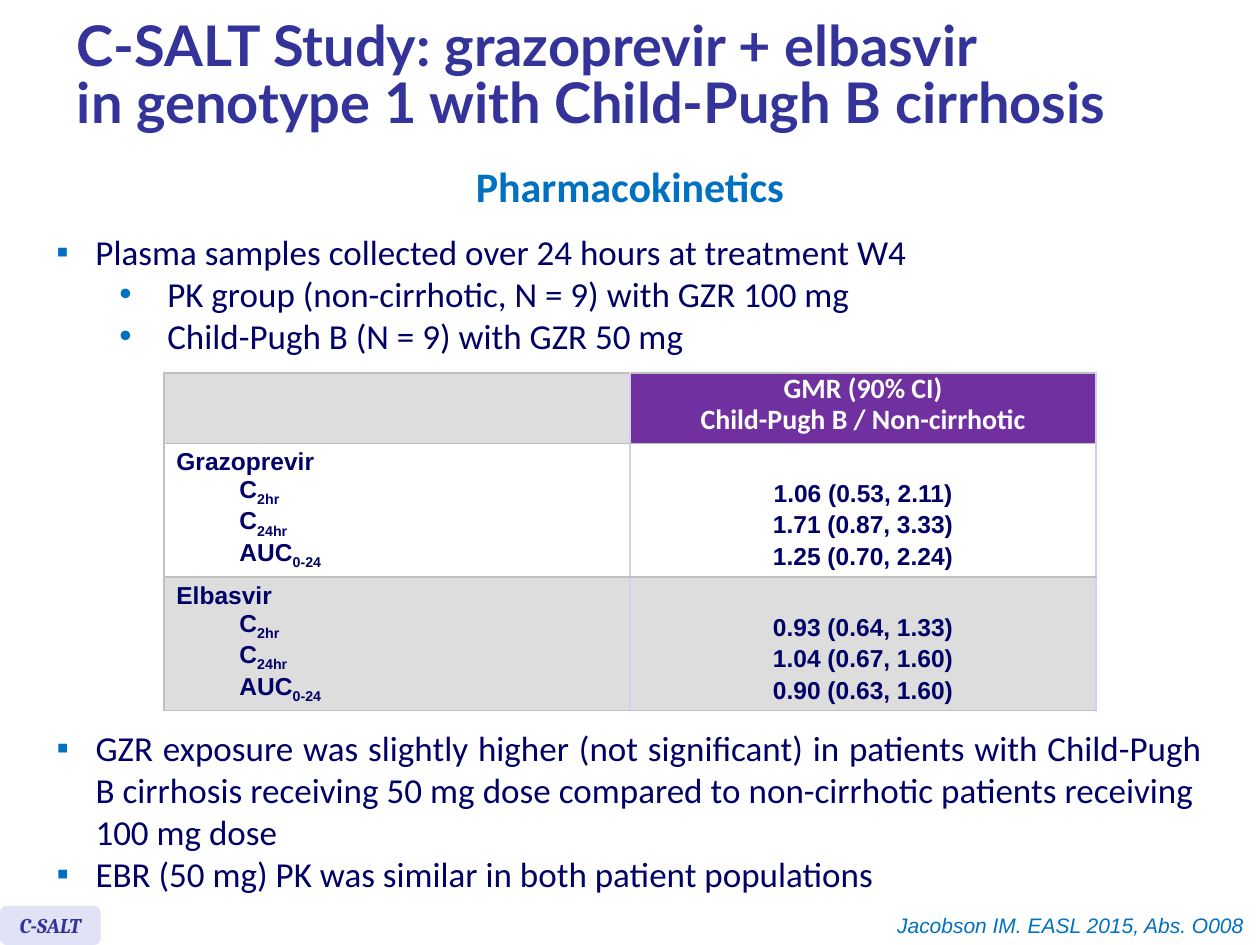
"""Build the C-SALT pharmacokinetics slide."""
from lxml.etree import SubElement as Sub
from pptx import Presentation
from pptx.dml.color import RGBColor as Rgb
from pptx.enum.shapes import MSO_SHAPE as Shape
from pptx.enum.text import MSO_ANCHOR as Anchor, PP_ALIGN as Align
from pptx.oxml.ns import qn
from pptx.util import Inches, Pt

HUE = dict(title="333399", text="000066", blue="0070C0", head="7030A0", white="FFFFFF",
           band="DDDDDD", tag="E2E2F6", edge="C0C0C0", pale="D0D0F0")
TITLE = "C-SALT Study: grazoprevir + elbasvir \vin genotype 1 with Child-Pugh B cirrhosis"
TOPIC = "Pharmacokinetics"
CITE = "Jacobson IM. EASL 2015, Abs. O008"
TAG = "C-SALT"
INTRO = [(0, "Plasma samples collected over 24 hours at treatment W4"),
         (1, "PK group (non-cirrhotic, N = 9) with GZR 100 mg"),
         (1, "Child-Pugh B (N = 9) with GZR 50 mg")]
NOTES = [(0, "GZR exposure was slightly higher (not significant) in patients with Child-Pugh B "
             "cirrhosis receiving 50 mg dose compared to non-cirrhotic patients receiving \v100 mg dose"),
         (0, "EBR (50 mg) PK was similar in both patient populations")]
LEVELS = [("▪", 0.31, -0.31), ("•", 0.88, -0.38)]
HEAD = ["GMR (90% CI)", "Child-Pugh B / Non-cirrhotic"]
TERMS = [("C", "2hr"), ("C", "24hr"), ("AUC", "0-24")]
DRUGS = [("Grazoprevir", ["1.06 (0.53, 2.11)", "1.71 (0.87, 3.33)", "1.25 (0.70, 2.24)"], "white"),
         ("Elbasvir", ["0.93 (0.64, 1.33)", "1.04 (0.67, 1.60)", "0.90 (0.63, 1.60)"], "band")]
ROWS = [0.56, 1.06, 1.06]


def style(para, face, size, hue, bold=False, slant=False):
    for run in para.runs:
        font = run.font
        font.name, font.size, font.bold, font.italic = face, Pt(size), bold, slant
        font.color.rgb = Rgb.from_string(HUE[hue])


def indent(para, left, first=0):
    props = para._p.get_or_add_pPr()
    props.set("marL", str(Inches(left)))
    props.set("indent", str(Inches(first)))
    return props


def label(slide, area, text, align, look, wrap=False):
    box = slide.shapes.add_textbox(*map(Inches, area))
    frame = box.text_frame
    frame.word_wrap, frame.text = wrap, text
    para = frame.paragraphs[0]
    para.alignment = align
    style(para, *look)
    return para


def bullets(slide, area, items):
    frame = slide.shapes.add_textbox(*map(Inches, area)).text_frame
    frame.word_wrap = True
    frame.text = "\n".join(text for _, text in items)
    for para, (level, _) in zip(frame.paragraphs, items):
        mark, left, first = LEVELS[level]
        para.level = level
        props = indent(para, left, first)
        Sub(Sub(props, qn("a:buClr")), qn("a:srgbClr"), val=HUE["blue"])
        Sub(props, qn("a:buFont"), typeface="Arial")
        Sub(props, qn("a:buChar"), char=mark)
        style(para, "Calibri", 20, "text")
    return frame


def paint(cell, hue, left):
    props = cell._tc.get_or_add_tcPr()
    for side, edge in zip("LRTB", (left, "pale", "edge", "edge")):
        line = Sub(props, qn("a:ln" + side), w=str(Pt(1)))
        Sub(Sub(line, qn("a:solidFill")), qn("a:srgbClr"), val=HUE[edge])
    cell.fill.solid()
    cell.fill.fore_color.rgb = Rgb.from_string(HUE[hue])


def write(cell, lines, look, align, anchor=Anchor.MIDDLE):
    cell.text = "\n".join(lines)
    cell.vertical_anchor = anchor
    for i, para in enumerate(cell.text_frame.paragraphs):
        para.alignment, para.line_spacing = align, Pt(15)
        if i:
            para.space_before = Pt(3)
        style(para, *look)


def grid(slide):
    area = map(Inches, (1.3, 2.96, 7.4, sum(ROWS)))
    table = slide.shapes.add_table(len(ROWS), 2, *area).table
    for row, high in zip(table.rows, ROWS):
        row.height = Inches(high)
    hues = [("band", "head")] + [(hue, hue) for *_, hue in DRUGS]
    for r, pair in enumerate(hues):
        for c, hue in enumerate(pair):
            paint(table.cell(r, c), hue, ("edge", "pale")[c])
    write(table.cell(0, 1), HEAD, ("Calibri", 16, "white", True), Align.CENTER)
    look = ("Arial", 14, "text", True)
    for r, (drug, values, _) in enumerate(DRUGS, 1):
        cell = table.cell(r, 0)
        write(cell, [drug] + [term for term, _ in TERMS], look, Align.LEFT)
        for para, (_, sub) in zip(cell.text_frame.paragraphs[1:], TERMS):
            indent(para, 0.5)
            run = para.add_run()
            run.text = sub
            style(para, *look)
            run._r.get_or_add_rPr().set("baseline", "-25000")
        write(table.cell(r, 1), values, look, Align.CENTER, Anchor.BOTTOM)


def main():
    deck = Presentation()
    deck.slide_width, deck.slide_height = Inches(10), Inches(7.5)
    slide = deck.slides.add_slide(deck.slide_layouts[5])
    title = slide.shapes.title
    title.left, title.top, title.width, title.height = map(Inches, (0.51, 0.08, 9.13, 1.07))
    frame = title.text_frame
    frame.text, frame.vertical_anchor = TITLE, Anchor.MIDDLE
    para = frame.paragraphs[0]
    para.alignment, para.line_spacing = Align.LEFT, 0.85
    style(para, "Lato", 32, "title", True)

    grid(slide)
    notes = bullets(slide, (0.35, 5.72, 9.29, 1.1), NOTES)
    notes.paragraphs[0].alignment = Align.JUSTIFY
    topic = label(slide, (3.66, 1.3, 2.68, 0.44), TOPIC, Align.CENTER, ("Calibri", 24, "blue", True))
    topic.line_spacing = Pt(23.6)
    bullets(slide, (0.35, 1.78, 9.13, 1.11), INTRO)
    label(slide, (6.95, 7.19, 3.02, 0.3), CITE, Align.RIGHT, ("Arial", 12, "blue", False, True), True)

    tag = slide.shapes.add_shape(Shape.ROUNDED_RECTANGLE, *map(Inches, (0, 7.19, 0.8, 0.31)))
    tag.shadow.inherit = False
    tag.fill.solid()
    tag.fill.fore_color.rgb = Rgb.from_string(HUE["tag"])
    tag.line.fill.background()
    frame = tag.text_frame
    frame.text, frame.word_wrap, frame.vertical_anchor = TAG, False, Anchor.MIDDLE
    frame.paragraphs[0].alignment = Align.CENTER
    style(frame.paragraphs[0], "Cambria", 12, "title", True, True)
    deck.save("out.pptx")


if __name__ == "__main__":
    main()
